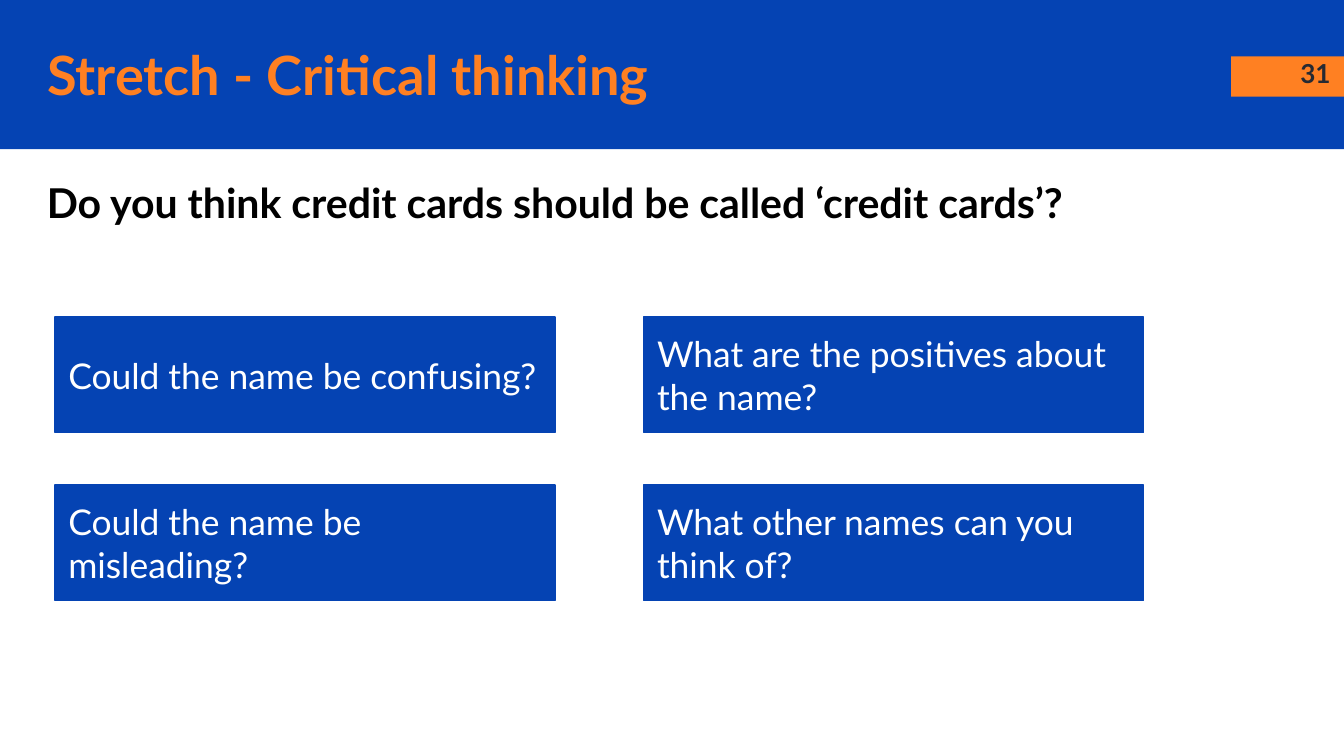
import pptx
import pptx.dml.color
import pptx.enum.shapes
import pptx.enum.text
import pptx.util

Inches = pptx.util.Inches
ALIGN = pptx.enum.text.PP_ALIGN
ANCHOR = pptx.enum.text.MSO_ANCHOR

COLORS = {
    "blue": "0543B3",
    "orange": "FF8022",
    "slate": "262A33",
    "black": "000000",
    "white": "FFFFFF",
}
FORMATS = {
    "title": {"size": pptx.util.Pt(29), "bold": True},
    "question": {"size": pptx.util.Pt(22), "bold": True},
    "prompt": {"size": pptx.util.Pt(19), "bold": False},
    "number": {"size": pptx.util.Pt(14), "bold": True},
}
PROMPTS = [
    ["Could the name be confusing?", "What are the positives about the name?"],
    ["Could the name be misleading?", "What other names can you think of?"],
]


def rgb(name):
    """Return the named palette colour."""
    return pptx.dml.color.RGBColor.from_string(COLORS[name])


def write(shape, text, style, color, anchor=ANCHOR.TOP, align=ALIGN.LEFT):
    """Fill a shape with one formatted paragraph."""
    frame = shape.text_frame
    frame_format = {
        "word_wrap": True,
        "auto_size": pptx.enum.text.MSO_AUTO_SIZE.NONE,
        "vertical_anchor": anchor,
    }
    for side in ("left", "top", "right", "bottom"):
        frame_format[f"margin_{side}"] = Inches(0.1)
    for name, value in frame_format.items():
        setattr(frame, name, value)
    paragraph = frame.paragraphs[0]
    paragraph.text = text
    paragraph.alignment = align
    for name, value in {"name": "Lato", **FORMATS[style]}.items():
        setattr(paragraph.font, name, value)
    paragraph.font.color.rgb = rgb(color)


def add_block(slide, box, color, outlined=False):
    """Add a flat rectangle in the given box."""
    block = slide.shapes.add_shape(
        pptx.enum.shapes.MSO_SHAPE.RECTANGLE, *map(Inches, box)
    )
    block.shadow.inherit = False
    block.fill.solid()
    block.fill.fore_color.rgb = rgb(color)
    if outlined:
        block.line.color.rgb = rgb(color)
        block.line.width = pptx.util.Pt(0.75)
    else:
        block.line.fill.background()
    return block


def add_header(slide, box, heading, page):
    """Place the banner, its heading and the page number tab."""
    left, top, width, height = box
    right = left + width
    add_block(slide, box, "blue")
    add_block(slide, (right - 0.84, top + 0.42, 0.84, 0.3), "orange")
    number = slide.shapes.add_textbox(
        *map(Inches, (right - 0.6, top + 0.33, 0.6, 0.43))
    )
    write(number, page, "number", "slate", align=ALIGN.RIGHT)
    title = slide.shapes.title
    title.left, title.top = Inches(left + 0.25), Inches(top + 0.27)
    title.width, title.height = Inches(8.46), Inches(0.56)
    write(title, heading, "title", "orange", ANCHOR.MIDDLE)
    title.element.getparent().append(title.element)


def add_question(slide, box, text):
    """Place the main question."""
    question = slide.shapes.add_textbox(*map(Inches, box))
    write(question, text, "question", "black")


def add_prompts(slide, box, rows):
    """Spread the prompt cards evenly over the box."""
    left, top, width, height = box
    card_width, card_height = 3.72, 0.86
    step_x = (width - card_width) / (len(rows[0]) - 1)
    step_y = (height - card_height) / (len(rows) - 1)
    for row, prompts in enumerate(rows):
        for column, prompt in enumerate(prompts):
            place = (left + column * step_x, top + row * step_y)
            card = add_block(slide, (*place, card_width, card_height), "blue", True)
            write(card, prompt, "prompt", "white", ANCHOR.MIDDLE)


def main():
    """Build and save the slide."""
    deck = pptx.Presentation()
    deck.slide_width, deck.slide_height = Inches(10), Inches(10 * 9 / 16)
    slide = deck.slides.add_slide(deck.slide_layouts.get_by_name("Title Only"))
    add_header(slide, (0, 0, 10, 1.11), "Stretch - Critical thinking", "31")
    add_question(
        slide,
        (0.25, 1.22, 8.19, 0.57),
        "Do you think credit cards should be called ‘credit cards’?",
    )
    add_prompts(slide, (0.41, 2.36, 8.1, 2.11), PROMPTS)
    deck.save("out.pptx")


if __name__ == "__main__":
    main()
